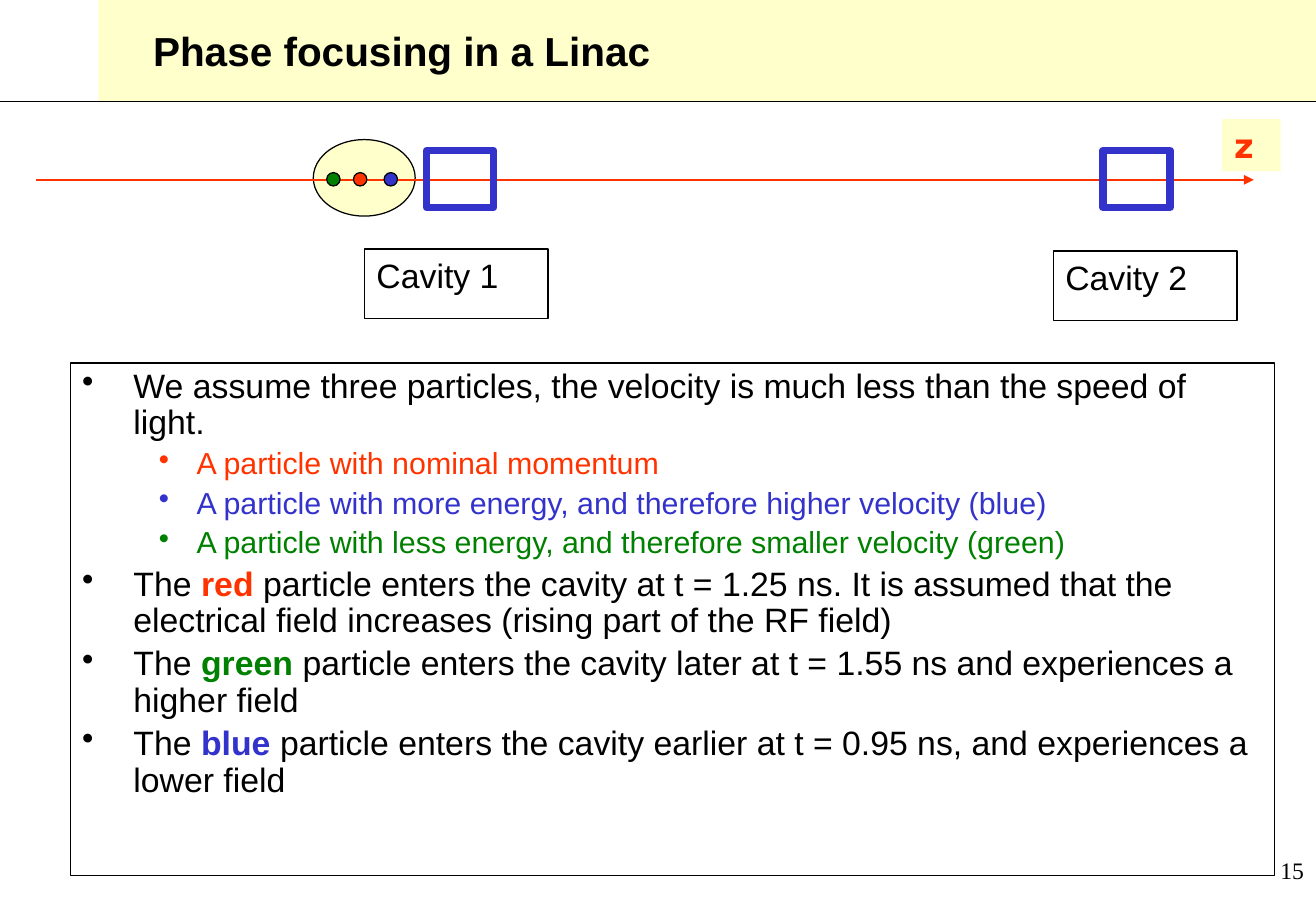
from lxml import etree
from pptx import Presentation
from pptx.dml.color import RGBColor
from pptx.enum.shapes import MSO_CONNECTOR, MSO_SHAPE
from pptx.enum.text import MSO_ANCHOR, PP_ALIGN
from pptx.oxml.ns import qn
from pptx.util import Cm, Pt

RECTANGLE, OVAL = MSO_SHAPE.RECTANGLE, MSO_SHAPE.OVAL
STRAIGHT = MSO_CONNECTOR.STRAIGHT
TOP, MIDDLE = MSO_ANCHOR.TOP, MSO_ANCHOR.MIDDLE
LEFT, RIGHT = PP_ALIGN.LEFT, PP_ALIGN.RIGHT

COLORS = {"black": "000000", "white": "FFFFFF", "cream": "FFFFCC",
          "red": "FF3300", "blue": "3333CC", "green": "008000"}
WIDTH, HEIGHT = 27.51, 19.05
# Per level: left margin, hanging indent (cm), text size (pt)
LEVELS = [(1.07, 1.07, 20), (2.39, 0.79, 18)]


def rgb(name):
    return RGBColor.from_string(COLORS[name])


class LinacSlide:
    """Holds the style and the current slide."""

    font = "Arial"
    thin = 0.75

    def __init__(self, deck):
        self.page = deck.slides.add_slide(deck.slide_layouts[6])

    def shape(self, kind, left, top, width, height, fill=None, line=None, weight=thin):
        box = self.page.shapes.add_shape(kind, Cm(left), Cm(top), Cm(width), Cm(height))
        box.shadow.inherit = False
        if fill:
            box.fill.solid()
            box.fill.fore_color.rgb = rgb(fill)
        else:
            box.fill.background()
        if line:
            box.line.color.rgb = rgb(line)
            box.line.width = Pt(weight)
        else:
            box.line.fill.background()
        return box

    def line(self, start, end, color, weight=thin, arrow=False):
        line = self.page.shapes.add_connector(STRAIGHT, *map(Cm, start + end))
        line.line.color.rgb = rgb(color)
        line.line.width = Pt(weight)
        if arrow:
            etree.SubElement(line.line._get_or_add_ln(), qn("a:tailEnd"), type="triangle")
        etree.SubElement(line._element.spPr, qn("a:effectLst"))

    def style(self, para, size, color="black", bold=False, font=font, align=LEFT):
        para.alignment = align
        para.font.name = font
        para.font.size = Pt(size)
        para.font.bold = bold
        para.font.color.rgb = rgb(color)

    def text(self, box, words, size, anchor=TOP, **style):
        box.text_frame.word_wrap = True
        box.text_frame.vertical_anchor = anchor
        para = box.text_frame.paragraphs[0]
        para.add_run().text = words
        self.style(para, size, **style)

    def bullets(self, box, items):
        frame = box.text_frame
        frame.word_wrap = True
        frame.vertical_anchor = TOP
        for index, (level, color, parts) in enumerate(items):
            para = frame.add_paragraph() if index else frame.paragraphs[0]
            margin, hanging, size = LEVELS[level]
            para.level = level
            para.line_spacing = 0.9
            para.space_before = Pt(4 if index else 0)
            properties = para._p.get_or_add_pPr()
            properties.set("marL", str(Cm(margin)))
            properties.set("indent", str(-Cm(hanging)))
            etree.SubElement(properties, qn("a:buChar"), char="•")
            self.style(para, size, color)
            for words, accent in parts:
                span = para.add_run()
                span.text = words
                if accent:
                    span.font.bold = True
                    span.font.color.rgb = rgb(accent)


def particle_item(color, rest):
    return 0, "black", [("The ", None), (color + " ", color), (rest, None)]


def plain_item(level, color, words):
    return level, color, [(words, None)]


def main():
    deck = Presentation()
    deck.slide_width, deck.slide_height = Cm(WIDTH), Cm(HEIGHT)
    slide = LinacSlide(deck)

    # Header and page number
    slide.shape(RECTANGLE, 2.06, 0, 1.7, 2.11, "cream")
    slide.line((0, 2.13), (WIDTH, 2.13), "black")
    title = slide.shape(RECTANGLE, 2.95, 0, WIDTH - 2.95, 2.11, "cream")
    slide.text(title, "Phase focusing in a Linac", 24, MIDDLE, bold=True)
    number = slide.shape(RECTANGLE, 21.78, 17.78, 5.73, 1.27)
    slide.text(number, "15", 14, font="Times New Roman", align=RIGHT)

    # Bunch and beam axis
    slide.shape(OVAL, 6.55, 2.92, 2.13, 1.6, "cream", "black")
    slide.line((0.76, 3.76), (26.21, 3.76), "red", 1.5, arrow=True)
    axis_label = slide.shape(RECTANGLE, 25.55, 2.49, 1.22, 1.09, "cream")
    slide.text(axis_label, "z", 20, color="red", bold=True, font="DejaVu Sans")

    # Particles
    for color, left in (("red", 7.39), ("blue", 8.03), ("green", 6.83)):
        slide.shape(OVAL, left, 3.61, 0.28, 0.28, color, "black")

    # Cavities and their labels
    for name, left, label_left, label_top in (("Cavity 1", 8.92, 7.62, 5.21),
                                              ("Cavity 2", 23.06, 22.02, 5.25)):
        slide.shape(RECTANGLE, left, 3.15, 1.4, 1.19, None, "blue", 4.5)
        label = slide.shape(RECTANGLE, label_left, label_top, 3.84, 1.45, "white", "black")
        slide.text(label, name, 20)

    # Explanation
    body = slide.shape(RECTANGLE, 1.47, 7.59, 25.17, 10.72, None, "black")
    slide.bullets(body, [
        plain_item(0, "black", "We assume three particles, the velocity is much less "
                               "than the speed of light."),
        plain_item(1, "red", "A particle with nominal momentum"),
        plain_item(1, "blue", "A particle with more energy, and therefore higher velocity (blue)"),
        plain_item(1, "green", "A particle with less energy, and therefore smaller velocity (green)"),
        particle_item("red", "particle enters the cavity at t = 1.25 ns. It is assumed that "
                             "the electrical field increases (rising part of the RF field)"),
        particle_item("green", "particle enters the cavity later at t = 1.55 ns and "
                               "experiences a higher field"),
        particle_item("blue", "particle enters the cavity earlier at t = 0.95 ns, and "
                              "experiences a lower field"),
    ])

    deck.save("out.pptx")


if __name__ == "__main__":
    main()
